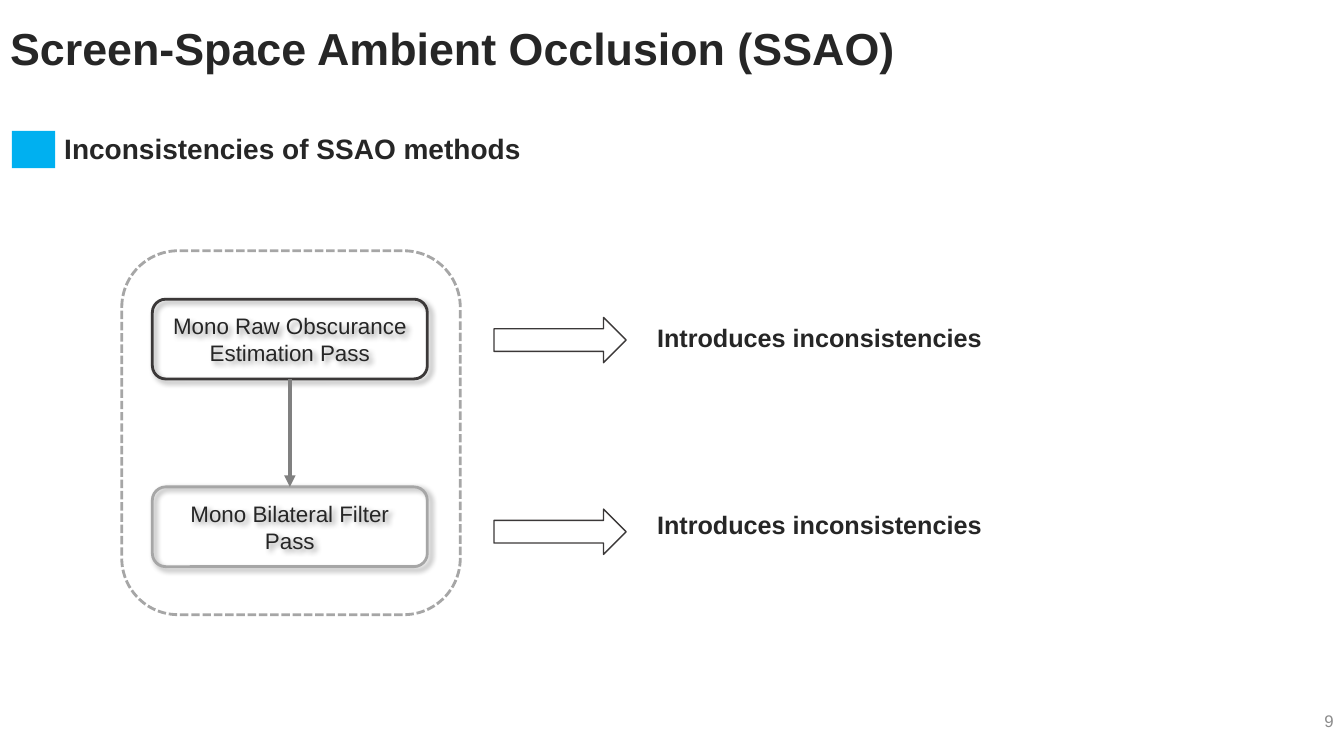
from lxml.etree import SubElement
from pptx import Presentation
from pptx.dml.color import RGBColor
from pptx.enum.dml import MSO_LINE_DASH_STYLE as Dash
from pptx.enum.shapes import MSO_CONNECTOR as Connector, MSO_SHAPE as Shape
from pptx.enum.text import MSO_ANCHOR as Anchor, PP_ALIGN as Align
from pptx.oxml.ns import qn
from pptx.util import Cm, Pt

TITLE = "Screen-Space Ambient Occlusion (SSAO)"
SUBTITLE = "Inconsistencies of SSAO methods"
PAGE_NUMBER = "9"
INK, DARK, GREY = "262626", "3B3838", "A6A6A6"
PASSES = [
    {"lines": ["Mono Raw Obscurance", "Estimation Pass"], "outline": DARK,
     "effect": "Introduces inconsistencies", "box_top": 7.54, "arrow_top": 8, "effect_top": 8},
    {"lines": ["Mono Bilateral Filter", "Pass"], "outline": GREY,
     "effect": "Introduces inconsistencies", "box_top": 12.27, "arrow_top": 12.83, "effect_top": 12.7},
]


def color(value):
    return RGBColor.from_string(value)


def write(shape, lines, size, bold=False, ink=INK, align=Align.LEFT, anchor=Anchor.TOP):
    frame = shape.text_frame
    frame.word_wrap = True
    frame.vertical_anchor = anchor
    frame.text = "\n".join(lines)
    for paragraph in frame.paragraphs:
        paragraph.alignment = align
        paragraph.font.name = "Arial"
        paragraph.font.size = Pt(size)
        paragraph.font.bold = bold
        paragraph.font.color.rgb = color(ink)


def add_text(slide, place, text, size, **style):
    write(slide.shapes.add_textbox(*map(Cm, place)), [text], size, **style)


def add_shape(slide, kind, place, outline=None, width=1, fill=None):
    shape = slide.shapes.add_shape(kind, *map(Cm, place))
    shape.shadow.inherit = False
    if fill:
        shape.fill.solid()
        shape.fill.fore_color.rgb = color(fill)
    else:
        shape.fill.background()
    if outline:
        shape.line.color.rgb = color(outline)
        shape.line.width = Pt(width)
    else:
        shape.line.fill.background()
    return shape


def cast_shadow(shape):
    effects = shape.element.spPr.find(qn("a:effectLst"))
    shadow = SubElement(effects, qn("a:outerShdw"), blurRad=str(Pt(4)), dist=str(Pt(3)),
                        dir="2700000", algn="tl", rotWithShape="0")
    tint = SubElement(shadow, qn("a:srgbClr"), val="000000")
    SubElement(tint, qn("a:alpha"), val="40000")


def link_down(slide, upper, lower):
    link = slide.shapes.add_connector(Connector.STRAIGHT, 0, 0, 0, 0)
    link.begin_connect(upper, 2)
    link.end_connect(lower, 0)
    link.line.color.rgb = color("808080")
    link.line.width = Pt(2.75)
    SubElement(link.line._get_or_add_ln(), qn("a:tailEnd"), type="triangle")
    SubElement(link.element.spPr, qn("a:effectLst"))


def main():
    presentation = Presentation()
    presentation.slide_width, presentation.slide_height = Cm(33.87), Cm(19.05)
    slide = presentation.slides.add_slide(presentation.slide_layouts[5])

    title = slide.shapes.title
    title.left, title.top, title.width, title.height = map(Cm, (0, 0, 29.21, 2.59))
    write(title, [TITLE], 32, bold=True, anchor=Anchor.MIDDLE)
    title.text_frame.paragraphs[0].line_spacing = 0.9

    add_text(slide, (32.31, 17.65, 1.55, 1.02), PAGE_NUMBER, 12, ink="8C8C8C",
             align=Align.RIGHT, anchor=Anchor.MIDDLE)
    add_text(slide, (1.37, 3.2, 13.56, 1.12), SUBTITLE, 20, bold=True)
    add_shape(slide, Shape.RECTANGLE, (0.3, 3.3, 1.09, 0.94), fill="00B0F0")

    boxes = []
    for step in PASSES:
        add_shape(slide, Shape.RIGHT_ARROW, (12.45, step["arrow_top"], 3.33, 1.14), DARK)
        add_text(slide, (16.31, step["effect_top"], 9.93, 1.02), step["effect"], 18, bold=True)
        box = add_shape(slide, Shape.ROUNDED_RECTANGLE, (3.84, step["box_top"], 6.93, 2.01),
                        step["outline"], 2)
        cast_shadow(box)
        write(box, step["lines"], 16, align=Align.CENTER, anchor=Anchor.MIDDLE)
        boxes.append(box)
    link_down(slide, *boxes)

    frame = add_shape(slide, Shape.ROUNDED_RECTANGLE, (3.07, 6.32, 8.53, 9.17), GREY, 2)
    frame.line.dash_style = Dash.SQUARE_DOT
    presentation.save("out.pptx")


if __name__ == "__main__":
    main()
